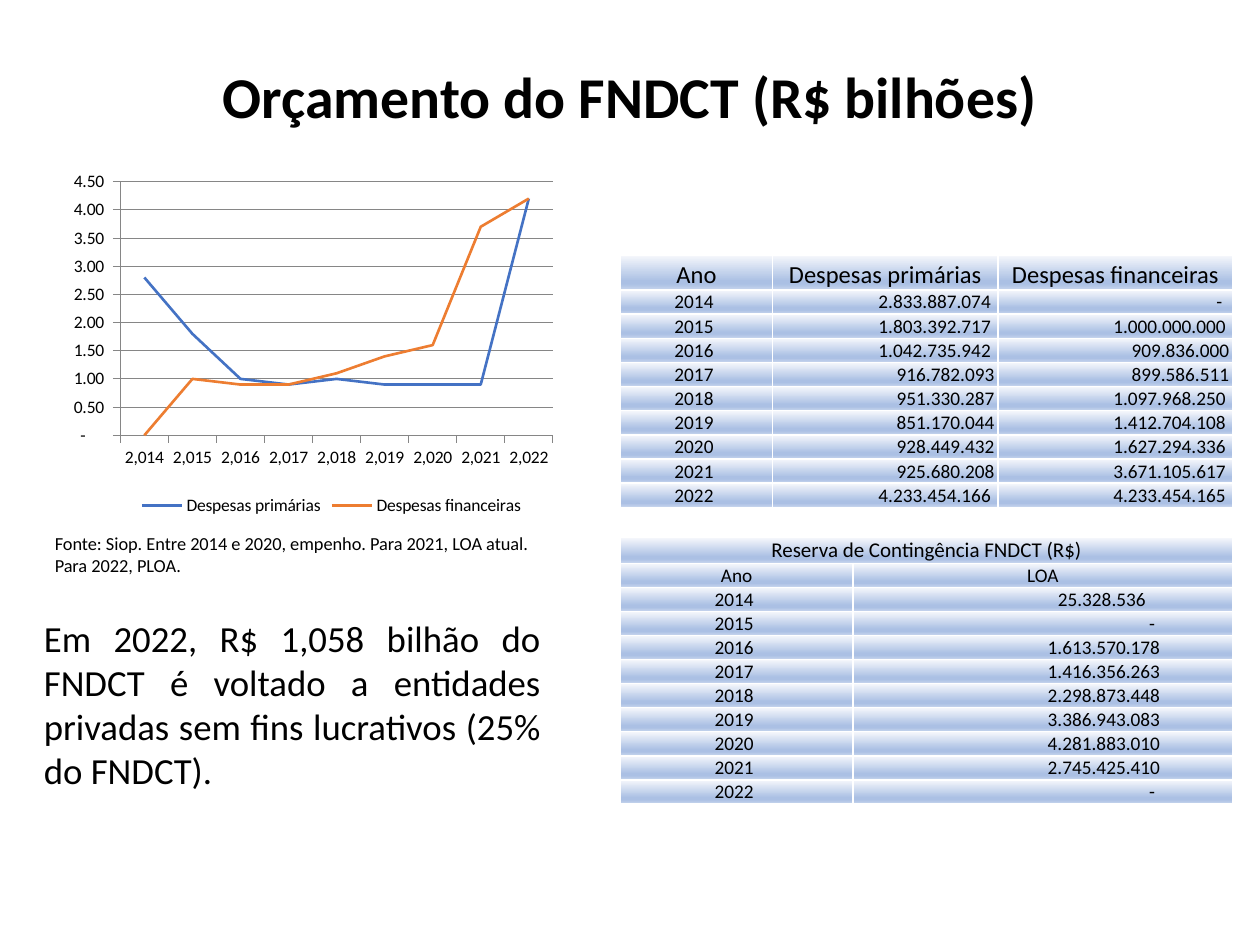
from pptx import Presentation
from pptx import util as u
from pptx.chart import data
from pptx.dml import color
from pptx.enum import chart as ch, text
from pptx.oxml import ns, parse_xml

TITLE = "Orçamento do FNDCT (R$ bilhões)"
SOURCE = "Fonte: Siop. Entre 2014 e 2020, empenho. Para 2021, LOA atual. Para 2022, PLOA."
NOTE = ("Em 2022, R$ 1,058 bilhão do FNDCT é voltado a entidades privadas "
        "sem fins lucrativos (25% do FNDCT).")
EXPENSE_HEADER = ("Ano", "Despesas primárias", "Despesas financeiras")
EXPENSES = [
    ("2014", "2.833.887.074", "-"),
    ("2015", "1.803.392.717", "1.000.000.000"),
    ("2016", "1.042.735.942", "909.836.000"),
    ("2017", "916.782.093", "899.586.511"),
    ("2018", "951.330.287", "1.097.968.250"),
    ("2019", "851.170.044", "1.412.704.108"),
    ("2020", "928.449.432", "1.627.294.336"),
    ("2021", "925.680.208", "3.671.105.617"),
    ("2022", "4.233.454.166", "4.233.454.165"),
]
RESERVE_TITLE = "Reserva de Contingência FNDCT (R$)"
RESERVE_HEADER = ("Ano", "LOA")
RESERVES = [
    ("2014", "25.328.536"),
    ("2015", "-"),
    ("2016", "1.613.570.178"),
    ("2017", "1.416.356.263"),
    ("2018", "2.298.873.448"),
    ("2019", "3.386.943.083"),
    ("2020", "4.281.883.010"),
    ("2021", "2.745.425.410"),
    ("2022", "-"),
]
EXPENSE_INSETS = {13: 4, 11: 2, 1: 6}
RESERVE_INSETS = {13: 41.5, 10: 49.7, 1: 44.5}

THEME = {
    "font": "Calibri", "ink": "000000", "grid": "868686", "border": "FFFFFF",
    "series": ("4472C4", "ED7D31"),
    "gradient": ((0, "F6F8FC"), (74, "ABC0E4"), (83, "ABC0E4"), (100, "C7D5ED")),
    "title": 33, "note": 21, "head": 14, "caption": 12, "cell": 11, "source": 10.5, "chart": 10,
}
A = ns.nsdecls("a")
ALIGN = text.PP_ALIGN


def rgb(name):
    return color.RGBColor.from_string(name)


def style(font, size, bold=False):
    font.name, font.size, font.bold = THEME["font"], u.Pt(size), bold
    font.color.rgb = rgb(THEME["ink"])


def box(*lengths):
    return [u.Pt(n) for n in lengths]


def add_title(s):
    sp = s.shapes.title
    sp.left, sp.top, sp.width, sp.height = box(49.7, 25.2, 620.6, 64)
    tf = sp.text_frame
    tf.text = TITLE
    tf.vertical_anchor = text.MSO_ANCHOR.MIDDLE
    p = tf.paragraphs[0]
    p.alignment, p.line_spacing = ALIGN.CENTER, 0.9
    style(p.font, THEME["title"], True)


def add_text(s, content, area, size, align):
    tf = s.shapes.add_textbox(*box(*area)).text_frame
    tf.word_wrap = True
    tf.auto_size = text.MSO_AUTO_SIZE.SHAPE_TO_FIT_TEXT
    p = tf.paragraphs[0]
    p.text, p.alignment = content, align
    style(p.font, size)


def billions(amount):
    return 0 if amount == "-" else round(int(amount.replace(".", "")) / 1e9, 1)


def add_line_chart(s):
    cd = data.CategoryChartData(number_format="0.0")
    cd.categories = [int(row[0]) for row in EXPENSES]
    cd.categories.number_format = "#,##0"
    for col in (1, 2):
        cd.add_series(EXPENSE_HEADER[col], [billions(row[col]) for row in EXPENSES])
    chart = s.shapes.add_chart(ch.XL_CHART_TYPE.LINE, *box(11.5, 95.8, 355.7, 201.6), cd).chart
    style(chart.font, THEME["chart"])
    chart.has_title = False
    chart.has_legend = True
    chart.legend.position = ch.XL_LEGEND_POSITION.BOTTOM
    chart.legend.include_in_layout = False
    chart.plots[0].vary_by_categories = False
    for series, hue in zip(chart.plots[0].series, THEME["series"]):
        series.smooth = False
        series.marker.style = ch.XL_MARKER_STYLE.NONE
        series.format.line.width = u.Pt(1.5)
        series.format.line.color.rgb = rgb(hue)
    years, values = chart.category_axis, chart.value_axis
    values.minimum_scale, values.maximum_scale, values.major_unit = 0, 4.5, 0.5
    values.has_major_gridlines = True
    for axis, fmt in ((years, "#,##0"),
                      (values, '_(* #,##0.00_);_(* \\(#,##0.00\\);_(* "-"??_);_(@_)')):
        axis.major_tick_mark = ch.XL_TICK_MARK.OUTSIDE
        axis.tick_labels.number_format = fmt
        axis.tick_labels.number_format_is_linked = False
    for part in (years, values, values.major_gridlines):
        part.format.line.color.rgb = rgb(THEME["grid"])
        part.format.line.width = u.Pt(0.5)
    plot_area = chart.plots[0]._element.getparent()
    for old in plot_area.findall(ns.qn("c:layout")):
        plot_area.remove(old)
    places = "".join(f'<c:{k} val="{v}"/>' for k, v in (
        ("layoutTarget", "inner"), ("xMode", "edge"), ("yMode", "edge"),
        ("x", 0.161), ("y", 0.04), ("w", 0.695), ("h", 0.719)))
    plot_area.insert(0, parse_xml(
        f'<c:layout {ns.nsdecls("c")}><c:manualLayout>{places}</c:manualLayout></c:layout>'))


def paint(cell):
    tc_pr = cell._tc.get_or_add_tcPr()
    for side in "LRTB":
        tc_pr.append(parse_xml(
            f'<a:ln{side} {A} w="12700"><a:solidFill><a:srgbClr val="{THEME["border"]}"/>'
            f'</a:solidFill></a:ln{side}>'))
    stops = "".join(f'<a:gs pos="{pos * 1000}"><a:srgbClr val="{hue}"/></a:gs>'
                    for pos, hue in THEME["gradient"])
    tc_pr.append(parse_xml(f'<a:gradFill {A} rotWithShape="1"><a:gsLst>{stops}</a:gsLst>'
                           '<a:lin ang="5400000" scaled="0"/></a:gradFill>'))


def add_budget_table(s, rows, heads, top, widths, heights, first_size, insets):
    first_height, row_height = heights
    height = first_height + row_height * (len(rows) - 1)
    table = s.shapes.add_table(len(rows), len(widths),
                               *box(354.5, top, sum(widths), height)).table
    for column, width in zip(table.columns, widths):
        column.width = u.Pt(width)
    for i, row in enumerate(rows):
        table.rows[i].height = u.Pt(row_height if i else first_height)
        for j, value in enumerate(row):
            cell = table.cell(i, j)
            amount = i >= heads and j > 0
            right = insets[len(value)] if amount else 3.5 if i >= heads else 0.7
            cell.margin_left, cell.margin_right, cell.margin_top, cell.margin_bottom = box(
                0.7, right, 0.3, 0)
            cell.vertical_anchor = text.MSO_ANCHOR.BOTTOM
            p = cell.text_frame.paragraphs[0]
            p.text = value
            p.alignment = ALIGN.RIGHT if amount else ALIGN.CENTER
            style(p.font, THEME["cell"] if i else first_size)
            paint(cell)
    return table


def main():
    prs = Presentation()
    prs.slide_width, prs.slide_height = box(720, 540)
    s = prs.slides.add_slide(prs.slide_layouts[5])
    add_title(s)
    add_line_chart(s)
    add_text(s, SOURCE, (24.2, 300.6, 298, 32.4), THEME["source"], ALIGN.LEFT)
    add_budget_table(s, [EXPENSE_HEADER] + EXPENSES, 1, 145.9, (87, 128.8, 134.2),
                     (19.8, 13.83), THEME["head"], EXPENSE_INSETS)
    reserve = add_budget_table(s, [(RESERVE_TITLE, ""), RESERVE_HEADER] + RESERVES, 2, 307.2,
                               (133, 217), (14.4, 13.75), THEME["caption"], RESERVE_INSETS)
    reserve.cell(0, 0).merge(reserve.cell(0, 1))
    add_text(s, NOTE, (18, 348.2, 298, 108.7), THEME["note"], ALIGN.JUSTIFY)
    prs.save("out.pptx")


if __name__ == "__main__":
    main()
